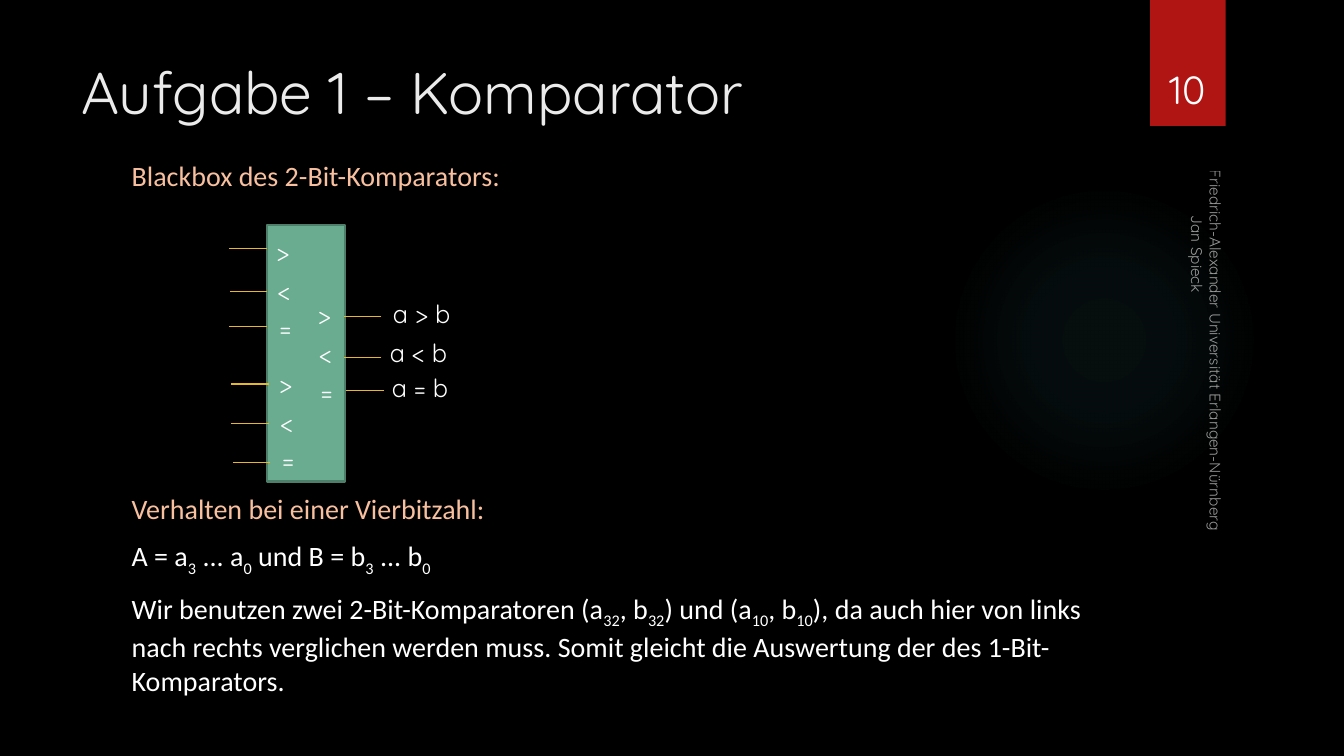
from typing import NamedTuple

from lxml import etree
from pptx import Presentation
from pptx.dml.color import RGBColor
from pptx.enum.shapes import MSO_CONNECTOR, MSO_SHAPE
from pptx.enum.text import MSO_ANCHOR, MSO_AUTO_SIZE, PP_ALIGN
from pptx.oxml.ns import qn
from pptx.util import Pt

RECT, OVAL = MSO_SHAPE.RECTANGLE, MSO_SHAPE.OVAL
STRAIGHT = MSO_CONNECTOR.STRAIGHT
TOP, BOTTOM = MSO_ANCHOR.TOP, MSO_ANCHOR.BOTTOM
LEFT, CENTER = PP_ALIGN.LEFT, PP_ALIGN.CENTER
FIT_SHAPE = MSO_AUTO_SIZE.SHAPE_TO_FIT_TEXT

COLORS = {
    "background": "000000", "glow": "50B9C1", "tab": "B01513",
    "title": "EBEBEB", "heading": "F8C09F", "text": "FFFFFF",
    "chip": "6AAC90", "chip_line": "4E7F6B", "wire": "E6B729",
}
WIRE_LENGTH = 27


class Wire(NamedTuple):
    left: float
    y: float


class Label(NamedTuple):
    text: str
    left: float
    top: float
    width: float


class Line(NamedTuple):
    """Parts between bars are subscripts."""
    text: str
    color: str = "text"
    indent: float = 0


def rgb(name: str) -> RGBColor:
    return RGBColor.from_string(COLORS[name])


def add_block(shapes, left: float, top: float, width: float, height: float,
              kind=RECT, fill: str = "", line: str = ""):
    sp = shapes.add_shape(kind, Pt(left), Pt(top), Pt(width), Pt(height))
    sp.shadow.inherit = False
    if fill:
        sp.fill.solid()
        sp.fill.fore_color.rgb = rgb(fill)
    else:
        sp.fill.background()
    if line:
        sp.line.color.rgb = rgb(line)
        sp.line.width = Pt(1.5)
    else:
        sp.line.fill.background()
    return sp


def add_glow(shapes) -> None:
    sp = add_block(shapes, 677.5, 131.8, 221.8, 221.8, kind=OVAL)
    no_fill = sp._element.spPr.find(qn("a:noFill"))
    grad = etree.Element(qn("a:gradFill"), rotWithShape="1")
    stops = etree.SubElement(grad, qn("a:gsLst"))
    for position, alpha in ((0, 7), (36, 6), (69, 0)):
        stop = etree.SubElement(stops, qn("a:gs"), pos=str(position * 1000))
        color = etree.SubElement(stop, qn("a:srgbClr"), val=COLORS["glow"])
        etree.SubElement(color, qn("a:alpha"), val=str(alpha * 1000))
    radial = etree.SubElement(grad, qn("a:path"), path="circle")
    etree.SubElement(radial, qn("a:fillToRect"),
                     {side: "50000" for side in "ltrb"})
    sp._element.spPr.replace(no_fill, grad)


def add_text(shapes, lines: list[Line], left: float, top: float, width: float,
             height: float, size: float = 18, font: str = "Quicksand",
             align=LEFT, anchor=TOP, wrap: bool = True, space: float = 0,
             rotation: float = 0, alpha: int = 100) -> None:
    sp = shapes.add_textbox(Pt(left), Pt(top), Pt(width), Pt(height))
    sp.rotation = rotation
    tf = sp.text_frame
    tf.word_wrap = wrap
    tf.vertical_anchor = anchor
    if not wrap:
        tf.auto_size = FIT_SHAPE
    for i, line in enumerate(lines):
        p = tf.add_paragraph() if i else tf.paragraphs[0]
        p.alignment = align
        if i:
            p.space_before = Pt(space)
        if line.indent:
            p._p.get_or_add_pPr().set("marL", str(Pt(line.indent)))
        for j, part in enumerate(line.text.split("|")):
            r = p.add_run()
            r.text = part
            r.font.size, r.font.name = Pt(size), font
            r.font.color.rgb = rgb(line.color)
            if j % 2:
                r._r.get_or_add_rPr().set("baseline", "-25000")
            if alpha < 100:
                color = r._r.rPr.find(".//" + qn("a:srgbClr"))
                etree.SubElement(color, qn("a:alpha"), val=str(alpha * 1000))


def add_wire(shapes, wire: Wire) -> None:
    cxn = shapes.add_connector(STRAIGHT, Pt(wire.left + WIRE_LENGTH),
                               Pt(wire.y), Pt(wire.left), Pt(wire.y))
    cxn.line.color.rgb = rgb("wire")
    cxn.line.width = Pt(0.75)
    etree.SubElement(cxn._element.spPr, qn("a:effectLst"))


# Comparator pins: each group lists >, < and = with the same small offsets
PIN_GROUPS = [(190.2, 164.9), (192.2, 259.2), (219.8, 210.2)]
PIN_OFFSETS = [(">", 0, 0), ("<", 1, 28.1), ("=", 2.2, 54.7)]
LABELS = [Label(sign, x + dx, y + dy, 25.2)
          for x, y in PIN_GROUPS for sign, dx, dy in PIN_OFFSETS]
LABELS += [Label("a > b", 273.6, 209.5, 60.5),
           Label("a < b", 271.4, 237.6, 60.5),
           Label("a = b", 272.9, 262.1, 60.5)]
WIRES = [
    Wire(163.5, 177.8), Wire(164, 208.1), Wire(163.5, 233.3),
    Wire(165, 274.3), Wire(165, 302.4), Wire(166.2, 330.5),
    Wire(245.5, 226.1), Wire(245.5, 255.6), Wire(247, 278.6),
]
EXPLANATION = [
    Line("Verhalten bei einer Vierbitzahl:", "heading"),
    Line("A = a|3| ... a|0| und B = b|3| ... b|0|"),
    Line("Wir benutzen zwei 2-Bit-Komparatoren (a|32|, b|32|) und "
         "(a|10|, b|10|), da auch hier von links nach rechts verglichen "
         "werden muss. Somit gleicht die Auswertung der des "
         "1-Bit-Komparators."),
]
FOOTER = [Line("Friedrich-Alexander Universität Erlangen-Nürnberg"),
          Line("Jan Spieck", indent=33)]


def main() -> None:
    prs = Presentation()
    prs.slide_width, prs.slide_height = Pt(960), Pt(540)
    slide = prs.slides.add_slide(prs.slide_layouts[6])
    slide.background.fill.solid()
    slide.background.fill.fore_color.rgb = rgb("background")
    shapes = slide.shapes

    # Backdrop
    add_glow(shapes)
    add_block(shapes, 821.5, 0, 54, 90, fill="tab")

    # Title and body
    add_text(shapes, [Line("Aufgabe 1 – Komparator", "title")],
             51, 36, 741, 110, size=42)
    add_text(shapes, [Line("Blackbox des 2-Bit-Komparators:", "heading")],
             87, 109.4, 704, 32, size=20, font="Calibri")
    add_text(shapes, EXPLANATION, 87, 347.4, 704, 167,
             size=20, font="Calibri", space=10)

    # Footer and page number
    add_text(shapes, FOOTER, 705, 254.2, 304, 23.8, size=11, anchor=BOTTOM,
             rotation=90, alpha=60)
    add_text(shapes, [Line("10")], 815, 23, 66.2, 60.5, size=28,
             align=CENTER, anchor=BOTTOM)

    # Comparator
    add_block(shapes, 190.8, 161, 55.5, 183, fill="chip", line="chip_line")
    for wire in WIRES:
        add_wire(shapes, wire)
    for label in LABELS:
        add_text(shapes, [Line(label.text)], label.left, label.top,
                 label.width, 29, wrap=False)

    prs.save("out.pptx")


if __name__ == "__main__":
    main()
